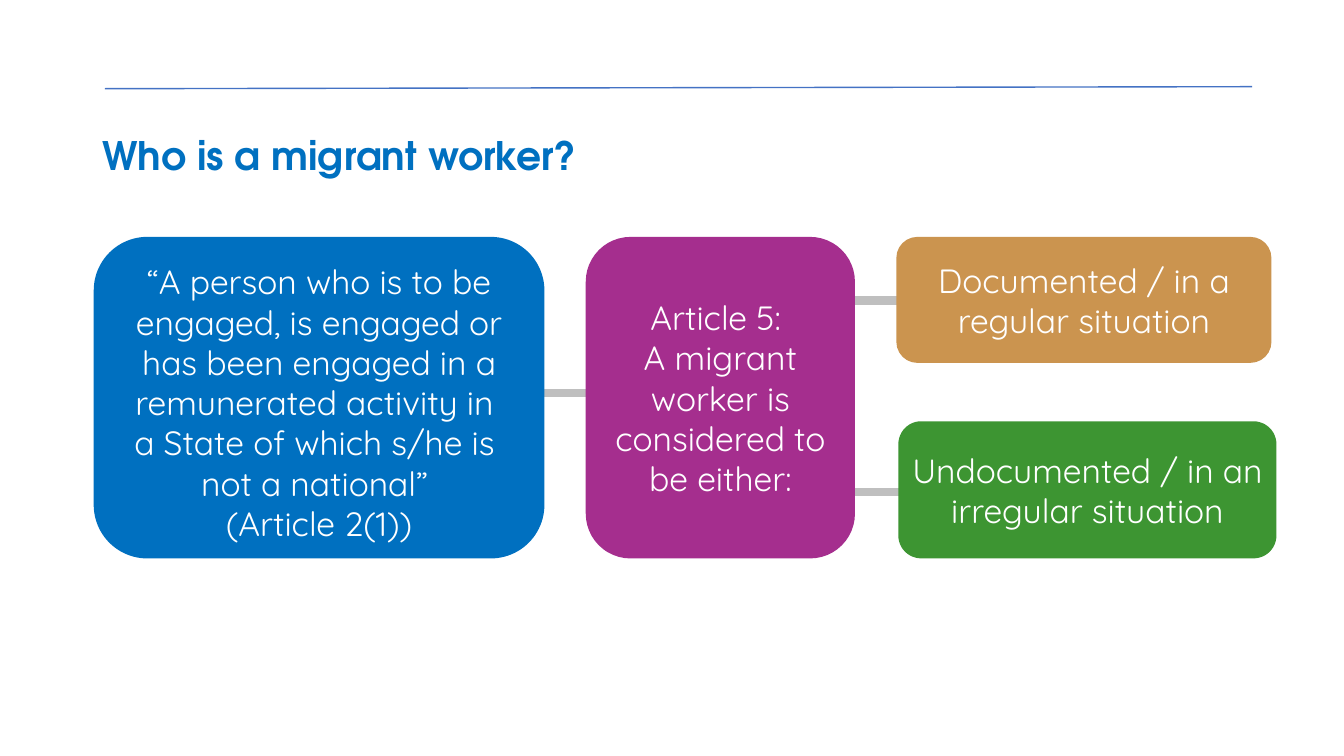
from pptx import Presentation
from pptx import util as u
from pptx.dml.color import RGBColor
from pptx.enum import shapes, text
from pptx.oxml.ns import qn
from lxml import etree

WHITE = RGBColor(0xFF, 0xFF, 0xFF)
BLUE = RGBColor(0x00, 0x70, 0xC0)
RULE_BLUE = RGBColor(0x44, 0x72, 0xC4)
GREY = RGBColor(0xBF, 0xBF, 0xBF)
PURPLE = RGBColor(0xA5, 0x2E, 0x8E)
GREEN = RGBColor(0x3D, 0x95, 0x32)
OCHRE = RGBColor(0xCB, 0x94, 0x4F)

# The grid has cells of a tenth of an inch
COLUMNS, ROWS = 133.3, 75
CELL = u.Inches(0.1)


def grid(*cells):
    return [round(cell * CELL) for cell in cells]


class Board:
    """Holds the text styles and the current slide."""

    title_font = {"name": "TeX Gyre Adventor", "size": u.Pt(28), "bold": True}
    body_font = {"name": "Quicksand", "size": u.Pt(24)}

    def __init__(self, presentation):
        self.slide = presentation.slides.add_slide(presentation.slide_layouts[6])

    def fill_text(self, frame, paragraphs, font, color, layout):
        frame.word_wrap = True
        for index, content in enumerate(paragraphs):
            paragraph = frame.paragraphs[0] if index == 0 else frame.add_paragraph()
            paragraph.text = content
            for name, value in layout.items():
                setattr(paragraph, name, value)
            for name, value in font.items():
                setattr(paragraph.font, name, value)
            paragraph.font.color.rgb = color

    def line(self, start, end, color, width):
        connector = self.slide.shapes.add_connector(
            shapes.MSO_CONNECTOR.STRAIGHT, *grid(*start, *end))
        connector.line.color.rgb = color
        connector.line.width = u.Pt(width)
        etree.SubElement(connector._element.spPr, qn("a:effectLst"))

    def title(self, area, content):
        box = self.slide.shapes.add_textbox(*grid(*area))
        self.fill_text(box.text_frame, [content], self.title_font, BLUE,
                       {"line_spacing": 0.9})

    def card(self, area, color, paragraphs, drop=0):
        shape = self.slide.shapes.add_shape(
            shapes.MSO_SHAPE.ROUNDED_RECTANGLE, *grid(*area))
        shape.shadow.inherit = False
        shape.fill.solid()
        shape.fill.fore_color.rgb = color
        shape.line.fill.background()
        frame = shape.text_frame
        margins = {"margin_left": 0, "margin_right": 0, "margin_bottom": 0,
                   "margin_top": grid(drop)[0],
                   "vertical_anchor": text.MSO_ANCHOR.MIDDLE}
        for name, value in margins.items():
            setattr(frame, name, value)
        self.fill_text(frame, paragraphs, self.body_font, WHITE,
                       {"alignment": text.PP_ALIGN.CENTER})


def main():
    presentation = Presentation()
    presentation.slide_width, presentation.slide_height = grid(COLUMNS, ROWS)
    board = Board(presentation)

    # Rule and title
    board.line((10.4, 8.8), (124.2, 8.6), RULE_BLUE, 1)
    board.title((9.2, 13.1, 115, 11.5), "Who is a migrant worker?")

    # Links, partly hidden behind the cards
    for column, row in [(80, 48.8), (80.8, 29.8), (49.9, 39)]:
        board.line((column, row), (column + 13.3, row), GREY, 6)

    # Definition, article and its two cases
    top, height = 23.5, 31.9
    board.card((9.3, top, 44.7, height), BLUE, [
        "“A person who is to be engaged, is engaged or has been engaged in a "
        "remunerated activity in \va State of which s/he is \vnot a national” ",
        "(Article 2(1))"], drop=0.9)
    board.card((58.1, top, 26.7, height), PURPLE, [
        "Article 5: \vA migrant worker is considered to be either:"])
    board.card((88.9, top, 37.2, 12.5), OCHRE, [
        "Documented / in a regular situation"])
    board.card((89.1, 41.8, 37.5, 13.6), GREEN, [
        "Undocumented / in an irregular situation"])

    presentation.save("out.pptx")


if __name__ == "__main__":
    main()
